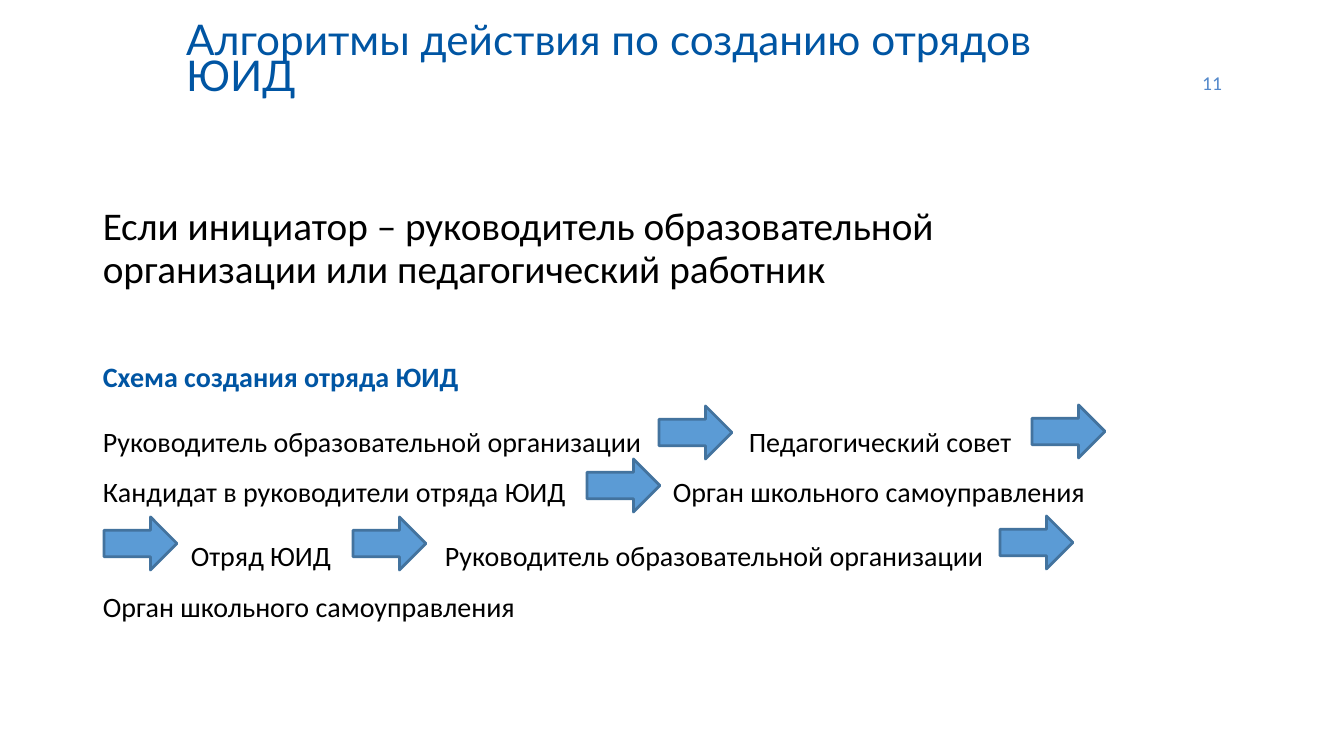
import pptx
import pptx.dml.color
import pptx.enum.shapes
import pptx.enum.text
import pptx.util
from lxml import etree

PX = 914400 / 100.8
THEME = {
    "title": "0055A3", "text": "000000", "number": "5388CA",
    "arrow": "5B9BD5", "outline": "43739E",
    "title_font": "Lato", "body_font": "Calibri",
    "title_size": 30.2, "lead_size": 28, "scheme_size": 20, "number_size": 14,
}
ALIGN = pptx.enum.text.PP_ALIGN


def px(*lengths):
    return [pptx.util.Emu(round(length * PX)) for length in lengths]


def write(paragraph, text, *, size, color="text", font="body_font", bold=False,
          spacing=1.0, before=0, align=ALIGN.LEFT, tabs=()):
    """Fill a paragraph; tabs are px from the left inset of its box."""
    paragraph.text = text
    if tabs:
        ns = "{http://schemas.openxmlformats.org/drawingml/2006/main}"
        tab_list = etree.SubElement(paragraph._p.get_or_add_pPr(), ns + "tabLst")
        for stop in px(*tabs):
            etree.SubElement(tab_list, ns + "tab", pos=str(stop), algn="l")
    paragraph.alignment = align
    paragraph.line_spacing = spacing
    paragraph.space_before = pptx.util.Pt(before)
    paragraph.font.size = pptx.util.Pt(THEME[size])
    paragraph.font.name = THEME[font]
    paragraph.font.bold = bold
    paragraph.font.color.rgb = pptx.dml.color.RGBColor.from_string(THEME[color])


deck = pptx.Presentation()
deck.slide_width, deck.slide_height = px(1344, 756)
slide = deck.slides.add_slide(deck.slide_layouts[5])

heading = slide.shapes.title
heading.left, heading.top, heading.width, heading.height = px(176, 25, 967, 76)
heading.text_frame.word_wrap = True
heading.text_frame.auto_size = pptx.enum.text.MSO_AUTO_SIZE.NONE
heading.text_frame.vertical_anchor = pptx.enum.text.MSO_ANCHOR.MIDDLE
write(heading.text_frame.paragraphs[0], "Алгоритмы действия по созданию отрядов ЮИД",
      size="title_size", color="title", font="title_font", spacing=0.7)

body = slide.shapes.add_textbox(*px(93, 202, 1050, 480)).text_frame
body.word_wrap = True
write(body.paragraphs[0],
      "Если инициатор – руководитель образовательной организации или педагогический работник",
      size="lead_size", spacing=0.9)
write(body.add_paragraph(), "Схема создания отряда ЮИД",
      size="scheme_size", color="title", bold=True, spacing=0.9, before=51)

# Line text, space before, tab stops that leave room for the arrows
scheme_lines = [
    ("Руководитель образовательной организации\tПедагогический совет", 10, (646,)),
    ("Кандидат в руководители отряда ЮИД\tОрган школьного самоуправления", 0, (570,)),
    ("\tОтряд ЮИД\tРуководитель образовательной организации", 10, (88, 342)),
    ("Орган школьного самоуправления", 0, ()),
]
for line, before, tabs in scheme_lines:
    write(body.add_paragraph(), line, size="scheme_size", spacing=1.5,
          before=before, tabs=tabs)

page_number = slide.shapes.add_textbox(*px(1158, 64, 74, 37)).text_frame
page_number.word_wrap = True
page_number.vertical_anchor = pptx.enum.text.MSO_ANCHOR.MIDDLE
write(page_number.paragraphs[0], "11", size="number_size", color="number", align=ALIGN.RIGHT)

for left, top in [(659, 406), (1032, 405), (587, 459), (104, 517), (353, 517), (1000, 516)]:
    arrow = slide.shapes.add_shape(pptx.enum.shapes.MSO_SHAPE.RIGHT_ARROW,
                                   *px(left, top, 73, 53))
    arrow.shadow.inherit = False
    arrow.fill.solid()
    arrow.fill.fore_color.rgb = pptx.dml.color.RGBColor.from_string(THEME["arrow"])
    arrow.line.color.rgb = pptx.dml.color.RGBColor.from_string(THEME["outline"])
    arrow.line.width = pptx.util.Pt(2)

deck.save("out.pptx")
